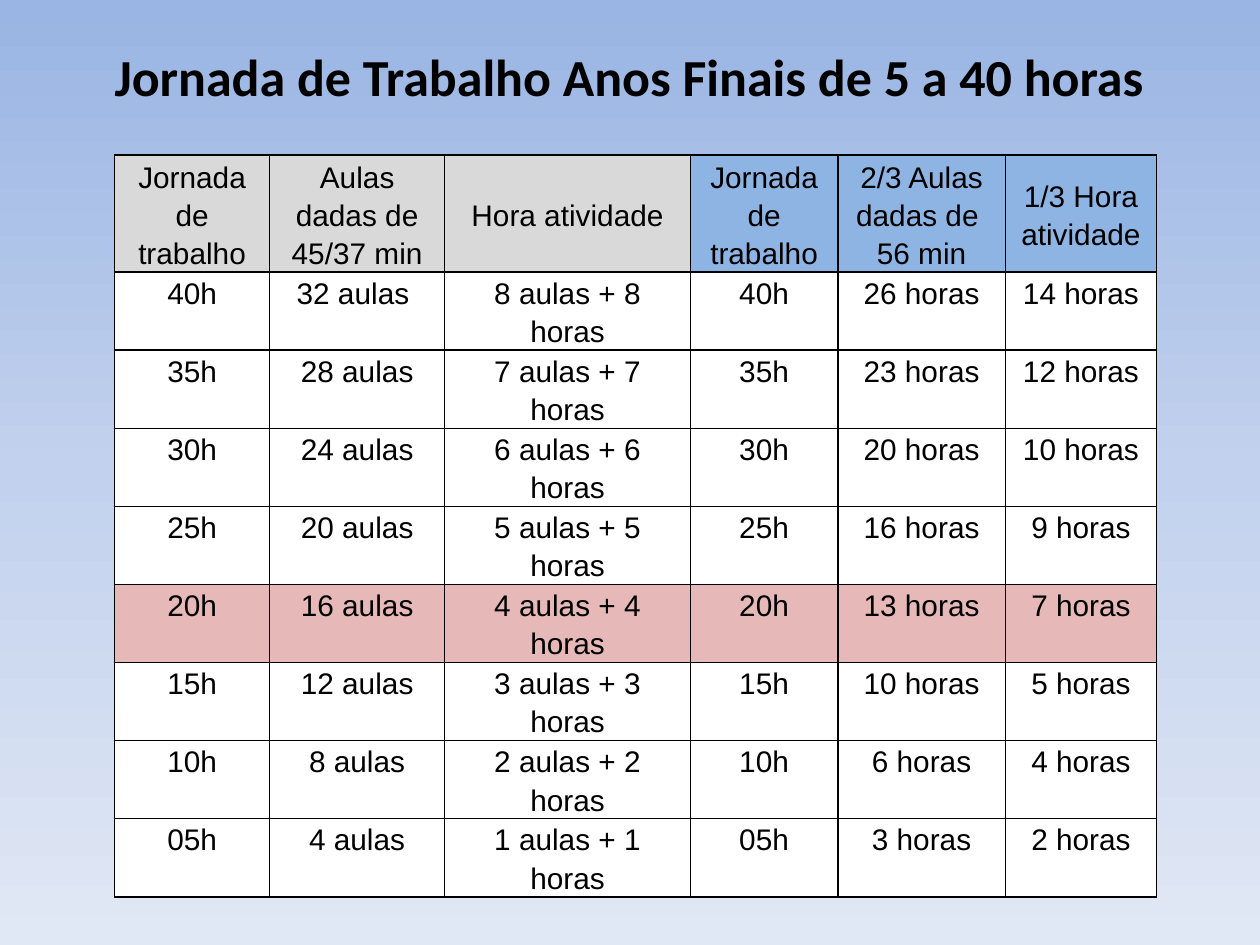
from copy import deepcopy
from lxml.etree import SubElement
from pptx import Presentation
from pptx.dml.color import RGBColor
from pptx.enum.text import MSO_ANCHOR, PP_ALIGN
from pptx.oxml.ns import qn
from pptx.util import Inches, Pt

TITLE = "Jornada de Trabalho Anos Finais de 5 a 40 horas"
HEADERS = [
    "Jornada de trabalho", "Aulas dadas de 45/37 min", "Hora atividade",
    "Jornada de trabalho", "2/3 Aulas dadas de \n56 min", "1/3 Hora atividade",
]
WORKLOADS = [
    ("40h", "32 aulas ", "8 aulas + 8 horas", "40h", "26 horas", "14 horas"),
    ("35h", "28 aulas", "7 aulas + 7 horas", "35h", "23 horas", "12 horas"),
    ("30h", "24 aulas", "6 aulas + 6 horas", "30h", "20 horas", "10 horas"),
    ("25h", "20 aulas", "5 aulas + 5 horas", "25h", "16 horas", "9 horas"),
    ("20h", "16 aulas", "4 aulas + 4 horas", "20h", "13 horas", "7 horas"),
    ("15h", "12 aulas", "3 aulas + 3 horas", "15h", "10 horas", "5 horas"),
    ("10h", "8 aulas", "2 aulas + 2 horas", "10h", "6 horas", "4 horas"),
    ("05h", "4 aulas", "1 aulas + 1 horas", "05h", "3 horas", "2 horas"),
]
HIGHLIGHTED = "20h"
COLUMN_WIDTHS = [1.23, 1.39, 1.95, 1.17, 1.33, 1.2]
HEADER_HEIGHT, ROW_HEIGHT = 0.93, 0.62

THEME = {
    "background": ["9AB5E4", "C2D1ED", "E1E8F5"],
    "text": "000000",
    "border": "000000",
    "old_header": "D9D9D9",
    "new_header": "8EB4E3",
    "row": "FFFFFF",
    "highlight": "E6B9B8",
    "title_font": "Calibri",
    "title_size": 29.7,
    "table_font": "Arial",
    "table_size": 17,
}


def color(name):
    return RGBColor.from_string(THEME[name])


def style_text(paragraph, kind, bold=False):
    paragraph.alignment = PP_ALIGN.CENTER
    for span in paragraph.runs:
        span.font.name = THEME[f"{kind}_font"]
        span.font.size = Pt(THEME[f"{kind}_size"])
        span.font.bold = bold
        span.font.color.rgb = color("text")


def paint_background(page):
    fill = page.background.fill
    fill.gradient()
    fill.gradient_angle = 270
    stop_list = page.element.xpath(".//a:gsLst")[0]
    stop_list.insert(1, deepcopy(stop_list[0]))
    for index, (stop, rgb) in enumerate(zip(fill.gradient_stops, THEME["background"])):
        stop.position = index / 2
        stop.color.rgb = RGBColor.from_string(rgb)


def add_title(page):
    box = page.shapes.title
    box.left, box.top, box.width, box.height = map(Inches, (0.5, 0.3, 9, 1.25))
    frame = box.text_frame
    frame.text = TITLE
    frame.vertical_anchor = MSO_ANCHOR.TOP
    style_text(frame.paragraphs[0], "title", bold=True)


def add_borders(cell):
    properties = cell._tc.get_or_add_tcPr()
    for side in ("lnL", "lnR", "lnT", "lnB"):
        line = SubElement(properties, qn(f"a:{side}"), w=str(Pt(1)))
        solid = SubElement(line, qn("a:solidFill"))
        SubElement(solid, qn("a:srgbClr"), val=THEME["border"])


def fill_cell(cell, text, fill_name, anchor):
    cell.margin_left = cell.margin_right = Inches(0.07)
    cell.margin_top = cell.margin_bottom = 0
    cell.vertical_anchor = anchor
    add_borders(cell)
    cell.fill.solid()
    cell.fill.fore_color.rgb = color(fill_name)
    cell.text_frame.text = text
    for paragraph in cell.text_frame.paragraphs:
        paragraph.line_spacing = 1.15
        style_text(paragraph, "table")


def add_workload_table(page):
    heights = [HEADER_HEIGHT] + [ROW_HEIGHT] * len(WORKLOADS)
    table = page.shapes.add_table(
        len(heights), len(HEADERS), Inches(0.91), Inches(1.23),
        Inches(sum(COLUMN_WIDTHS)), Inches(sum(heights)),
    ).table
    table.first_row = table.horz_banding = False
    for column, width in zip(table.columns, COLUMN_WIDTHS):
        column.width = Inches(width)
    for row, height in zip(table.rows, heights):
        row.height = Inches(height)
    for index, text in enumerate(HEADERS):
        fill_name = "old_header" if index < 3 else "new_header"
        fill_cell(table.cell(0, index), text, fill_name, MSO_ANCHOR.MIDDLE)
    for row_index, values in enumerate(WORKLOADS, start=1):
        fill_name = "highlight" if values[0] == HIGHLIGHTED else "row"
        for index, text in enumerate(values):
            fill_cell(table.cell(row_index, index), text, fill_name, MSO_ANCHOR.TOP)


def main():
    deck = Presentation()
    deck.slide_width, deck.slide_height = Inches(10), Inches(7.5)
    page = deck.slides.add_slide(deck.slide_layouts[5])
    paint_background(page)
    add_title(page)
    add_workload_table(page)
    deck.save("out.pptx")


if __name__ == "__main__":
    main()
